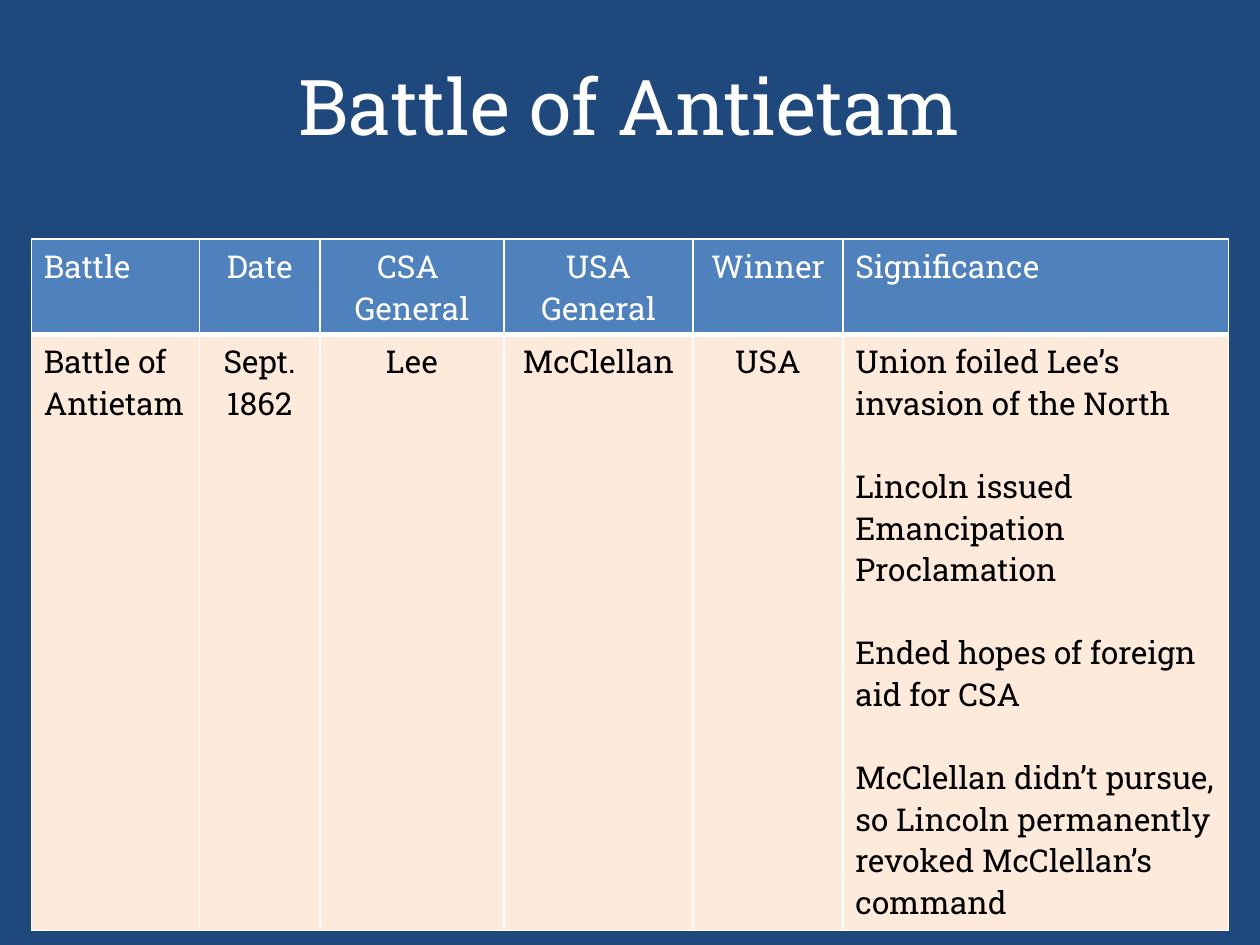
"""Builds a slide that sums up the Battle of Antietam in a table."""
from dataclasses import dataclass

from lxml import etree
from pptx import Presentation
from pptx import util as u
from pptx.dml import color
from pptx.enum import text
from pptx.oxml import ns

FONT = "Roboto Slab"
NAVY, BLUE, PEACH = "1F497D", "4F81BD", "FDEADA"
WHITE, BLACK = "FFFFFF", "000000"
LEFT, CENTER = text.PP_ALIGN.LEFT, text.PP_ALIGN.CENTER


@dataclass
class Column:
    width: float
    heading: list[str]
    entry: list[str]
    align: text.PP_ALIGN = CENTER


@dataclass
class RowStyle:
    height: float
    fill: str
    ink: str
    bottom_border: float
    gap: float


COLUMNS = [
    Column(3.39, ["Battle"], ["Battle of Antietam"], LEFT),
    Column(2.43, ["Date"], ["Sept. 1862"]),
    Column(3.71, ["CSA ", "General"], ["Lee"]),
    Column(3.81, ["USA", "General"], ["McClellan"]),
    Column(3.02, ["Winner"], ["USA"]),
    Column(7.77, ["Significance"], [
        "Union foiled Lee’s invasion of the North",
        "Lincoln issued Emancipation Proclamation",
        "Ended hopes of foreign aid for CSA",
        "McClellan didn’t pursue, so Lincoln permanently revoked McClellan’s command",
    ], LEFT),
]
HEADER = RowStyle(1.92, BLUE, WHITE, 3, 0)
BODY = RowStyle(12.02, PEACH, BLACK, 1, 23.75)


def rgb(value: str) -> color.RGBColor:
    return color.RGBColor.from_string(value)


def paint(fill, value: str) -> None:
    fill.solid()
    fill.fore_color.rgb = rgb(value)


def write(frame, lines: list[str], size: float, ink: str,
          align: text.PP_ALIGN, gap: float = 0) -> None:
    for index, line in enumerate(lines):
        paragraph = frame.add_paragraph() if index else frame.paragraphs[0]
        paragraph.alignment = align
        paragraph.space_before = u.Pt(gap if index else 0)
        run = paragraph.add_run()
        run.text = line
        run.font.name = FONT
        run.font.size = u.Pt(size)
        run.font.color.rgb = rgb(ink)


def add_borders(cell, bottom: float) -> None:
    properties = cell._tc.get_or_add_tcPr()
    for side, width in {"L": 1, "R": 1, "T": 1, "B": bottom}.items():
        line = etree.SubElement(properties, ns.qn(f"a:ln{side}"), w=str(u.Pt(width)))
        solid = etree.SubElement(line, ns.qn("a:solidFill"))
        etree.SubElement(solid, ns.qn("a:srgbClr"), val=WHITE)


def fill_cell(cell, lines: list[str], style: RowStyle, align: text.PP_ALIGN) -> None:
    add_borders(cell, style.bottom_border)
    paint(cell.fill, style.fill)
    write(cell.text_frame, lines, 18, style.ink, align, style.gap)


def add_title(slide, title: str) -> None:
    heading = slide.shapes.add_textbox(u.Cm(1.27), u.Cm(0.84), u.Cm(22.86), u.Cm(2.54))
    frame = heading.text_frame
    frame.word_wrap = True
    frame.vertical_anchor = text.MSO_ANCHOR.MIDDLE
    write(frame, [title], 44, WHITE, CENTER)


def add_battle_table(slide) -> None:
    battle_table = slide.shapes.add_table(
        2, len(COLUMNS), u.Cm(0.63), u.Cm(4.82),
        u.Cm(sum(column.width for column in COLUMNS)),
        u.Cm(HEADER.height + BODY.height)).table
    for row, style in zip(battle_table.rows, (HEADER, BODY)):
        row.height = u.Cm(style.height)
    for index, column in enumerate(COLUMNS):
        battle_table.columns[index].width = u.Cm(column.width)
        fill_cell(battle_table.cell(0, index), column.heading, HEADER, column.align)
        fill_cell(battle_table.cell(1, index), column.entry, BODY, column.align)


def main() -> None:
    deck = Presentation()
    deck.slide_width, deck.slide_height = u.Cm(25.4), u.Cm(19.05)
    slide = deck.slides.add_slide(deck.slide_layouts[6])
    paint(slide.background.fill, NAVY)
    add_title(slide, "Battle of Antietam")
    add_battle_table(slide)
    deck.save("out.pptx")


if __name__ == "__main__":
    main()
